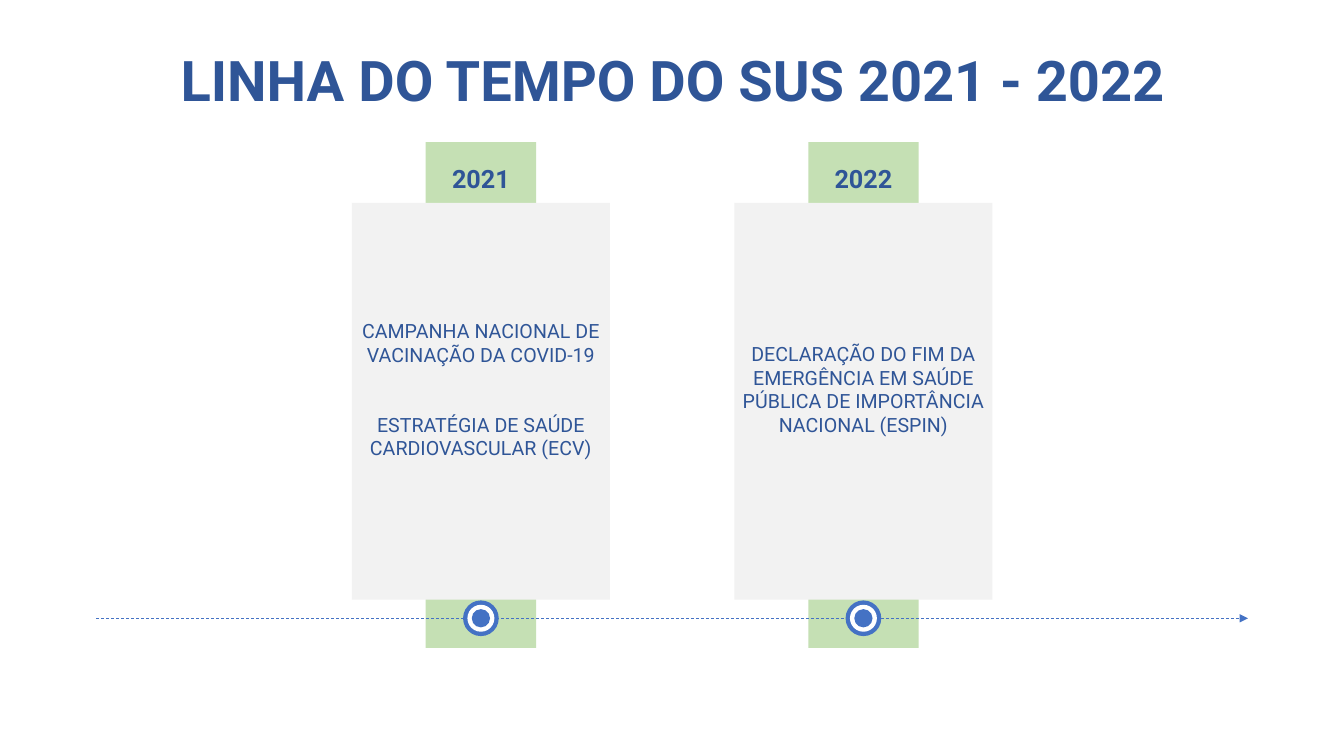
from pptx import Presentation
from pptx import util as u
from pptx.dml.color import RGBColor
from pptx.enum import dml, shapes, text
from pptx.oxml.ns import qn
from lxml import etree

NAVY = RGBColor(0x2F, 0x55, 0x97)
BLUE = RGBColor(0x44, 0x72, 0xC4)
GREEN = RGBColor(0xC5, 0xE0, 0xB4)
GREY = RGBColor(0xF2, 0xF2, 0xF2)
WHITE = RGBColor(0xFF, 0xFF, 0xFF)

AXIS_Y = 15.58
BAND_W = 2.78
CARD_W = 6.5
YEARS = [
    (12.12, "2021", ["CAMPANHA NACIONAL DE VACINAÇÃO DA COVID-19",
                     "ESTRATÉGIA DE SAÚDE CARDIOVASCULAR (ECV)"]),
    (21.76, "2022", ["DECLARAÇÃO DO FIM DA EMERGÊNCIA EM SAÚDE PÚBLICA "
                     "DE IMPORTÂNCIA NACIONAL (ESPIN)"]),
]


def write(tf, *lines, size=14, bold=False, gap=0, line_spacing=1.0,
          anchor=text.MSO_ANCHOR.MIDDLE):
    """Fill a text frame with centred paragraphs."""
    tf.word_wrap = True
    tf.vertical_anchor = anchor
    for i, line in enumerate(lines):
        p = tf.add_paragraph() if i else tf.paragraphs[0]
        p.alignment = text.PP_ALIGN.CENTER
        p.line_spacing = line_spacing
        if i:
            p.space_before = u.Pt(gap)
        r = p.add_run()
        r.text = line
        r.font.name = "Roboto"
        r.font.size = u.Pt(size)
        r.font.bold = bold
        r.font.color.rgb = NAVY


class Timeline:
    """Draws timeline elements on one slide in a shared style."""

    def __init__(self, slide):
        """Keep the slide that receives the elements."""
        self.s = slide

    def shape(self, kind, x, y, w, h, fill):
        """Add a flat shape without outline."""
        sp = self.s.shapes.add_shape(kind, u.Cm(x), u.Cm(y), u.Cm(w), u.Cm(h))
        sp.shadow.inherit = False
        sp.fill.solid()
        sp.fill.fore_color.rgb = fill
        sp.line.fill.background()
        return sp

    def label(self, x, y, w, h, line, **style):
        """Add a text box with one line."""
        sp = self.s.shapes.add_textbox(u.Cm(x), u.Cm(y), u.Cm(w), u.Cm(h))
        write(sp.text_frame, line, **style)

    def band(self, cx):
        """Add the green band behind a year."""
        self.shape(shapes.MSO_SHAPE.RECTANGLE, cx - BAND_W / 2, 3.58,
                   BAND_W, 12.75, GREEN)

    def axis(self, x1, x2):
        """Add the dashed time arrow."""
        y = u.Cm(AXIS_Y)
        c = self.s.shapes.add_connector(shapes.MSO_CONNECTOR.STRAIGHT,
                                        u.Cm(x1), y, u.Cm(x2), y)
        c.line.color.rgb = BLUE
        c.line.width = u.Pt(0.5)
        c.line.dash_style = dml.MSO_LINE.DASH
        etree.SubElement(c.line._get_or_add_ln(), qn("a:tailEnd"), type="triangle")
        etree.SubElement(c._element.spPr, qn("a:effectLst"))

    def card(self, cx, lines):
        """Add the grey card with the events of a year."""
        sp = self.shape(shapes.MSO_SHAPE.RECTANGLE, cx - CARD_W / 2, 5.11,
                        CARD_W, 10, GREY)
        tf = sp.text_frame
        tf.margin_left = tf.margin_right = u.Cm(0.2)
        tf.margin_bottom = u.Cm(0.72)
        write(tf, *lines, gap=33)

    def marker(self, cx):
        """Add the concentric dots on the axis."""
        for d, fill in ((0.9, BLUE), (0.68, WHITE), (0.46, BLUE)):
            self.shape(shapes.MSO_SHAPE.OVAL, cx - d / 2, AXIS_Y - d / 2, d, d, fill)

    def year(self, cx, name):
        """Add the year label on its band."""
        self.label(cx - BAND_W / 2, 3.99, BAND_W, 1.02, name, size=18, bold=True,
                   anchor=text.MSO_ANCHOR.TOP)


def main():
    """Build and save the slide."""
    prs = Presentation()
    prs.slide_width, prs.slide_height = u.Cm(33.87), u.Cm(19.05)
    s = Timeline(prs.slides.add_slide(prs.slide_layouts[6]))
    for cx, _, _ in YEARS:
        s.band(cx)
    s.label(2.34, 1.02, 29.21, 2.18, "LINHA DO TEMPO DO SUS 2021 - 2022",
            size=40, bold=True, line_spacing=0.9)
    s.axis(2.42, 31.45)
    for cx, name, lines in YEARS:
        s.card(cx, lines)
        s.marker(cx)
        s.year(cx, name)
    prs.save("out.pptx")


if __name__ == "__main__":
    main()
